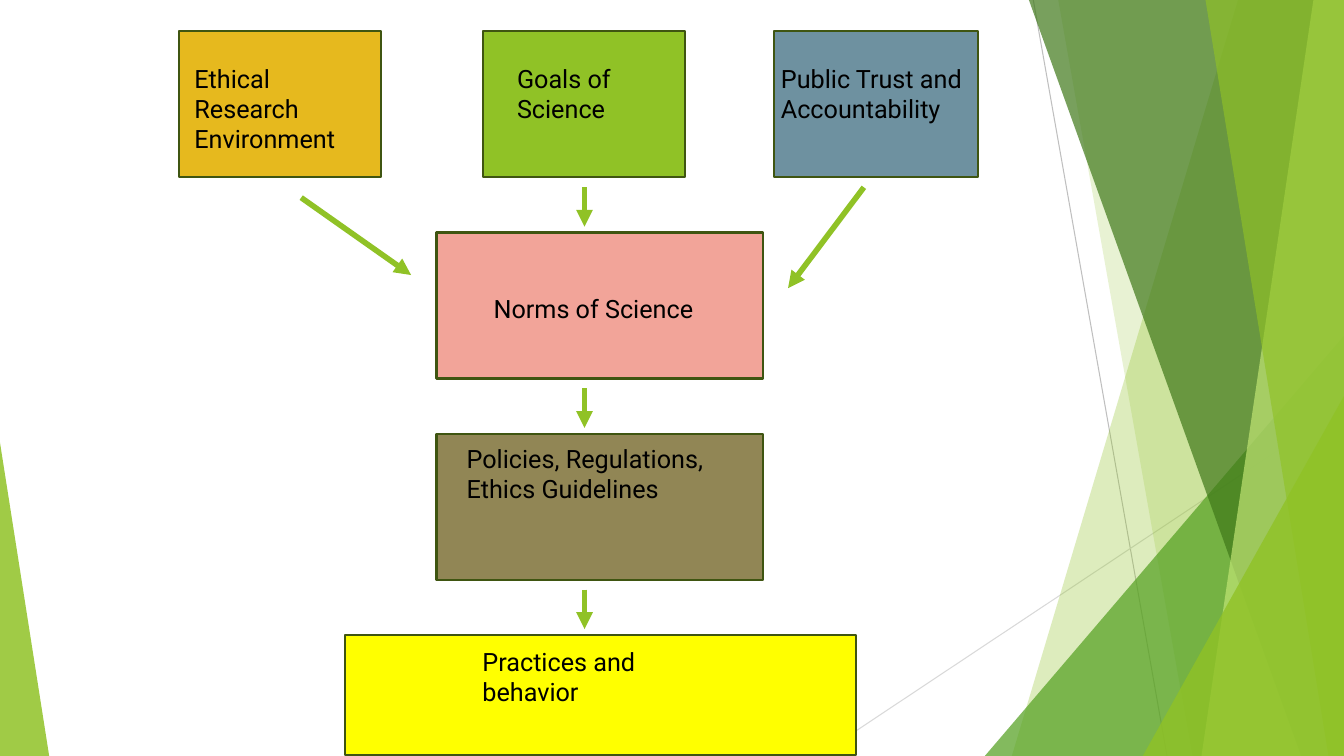
from lxml import etree
from pptx import Presentation
from pptx.dml.color import RGBColor
from pptx.enum.shapes import MSO_CONNECTOR, MSO_SHAPE
from pptx.enum.text import MSO_AUTO_SIZE
from pptx.oxml.ns import qn
from pptx.util import Cm, Pt

STRAIGHT = MSO_CONNECTOR.STRAIGHT
RECTANGLE = MSO_SHAPE.RECTANGLE
TRIANGLE = MSO_SHAPE.ISOSCELES_TRIANGLE
FIT_SHAPE = MSO_AUTO_SIZE.SHAPE_TO_FIT_TEXT

WIDTH, HEIGHT = 33.87, 19.05
TOP, ROW_PITCH, BOX_HEIGHT = 0.79, 5.07, 3.68
GREEN, OUTLINE, BLACK = "90C226", "3F5511", "000000"
FONT = {"name": "Roboto", "size": Pt(18)}

# row, left, width, height, fill, text, text left, text drop, text width, lines
BOXES = [
    (1, 11, 8.23, BOX_HEIGHT, "F2A499", "Norms of Science", 12.19, 1.4, 6.45, 1),
    (2, 11, 8.23, BOX_HEIGHT, "918655", "Policies, Regulations, Ethics Guidelines", 11.51, 0.12, 7.29, 2),
    (0, 4.52, 5.08, BOX_HEIGHT, "E6B91E", "Ethical Research Environment", 4.65, 0.68, 4.75, 3),
    (0, 12.18, 5.08, BOX_HEIGHT, GREEN, "Goals of Science", 12.78, 0.68, 4.75, 2),
    (0, 19.51, 5.13, BOX_HEIGHT, "6E91A0", "Public Trust and Accountability", 19.43, 0.68, 5.13, 2),
    (3, 8.69, 12.88, 3.02, "FFFF00", "Practices and behavior", 11.91, 0.15, 6.45, 2),
]
SIDE_ARROWS = [(7.59, 4.98, 10.36, 6.93), (21.77, 4.72, 19.86, 7.26)]
DOWN_ARROW_X, DOWN_ARROW_TOP, DOWN_ARROW_LENGTH = 14.73, 4.72, 0.99

HAIRLINES = [
    (26.04, 0, 29.41, HEIGHT, "BFBFBF"),
    (WIDTH, 10.24, 20.62, HEIGHT, "D9D9D9"),
]
BANDS_BEHIND = [(31.2, 25.5, GREEN, 30), (26.67, 30.05, GREEN, 20)]
BANDS_FRONT = [
    (25.93, 32.79, "3F7819", 70),
    (33.1, 30.28, "C0E474", 70),
    (30.38, 33.48, GREEN, 65),
]
BACK_TRIANGLE = (24.82, 8.46, 9.05, 1, "54A021", 72)
FRONT_TRIANGLES = [(28.8, 9.98, 5.07, 1, GREEN, 80), (0, 11.15, 1.24, 0, GREEN, 85)]


def set_values(target, values):
    for name, value in values.items():
        setattr(target, name, value)


def color(target, hex_color):
    target.rgb = RGBColor.from_string(hex_color)


def fill_shape(shape, hex_color, opacity=100):
    shape.shadow.inherit = False
    shape.fill.solid()
    color(shape.fill.fore_color, hex_color)
    if opacity < 100:
        fill_color = shape._element.spPr.find(qn("a:solidFill"))[0]
        etree.SubElement(fill_color, qn("a:alpha"), val=str(opacity * 1000))
    shape.line.fill.background()


def add_line(slide, x1, y1, x2, y2, hex_color, width, arrow=False):
    line = slide.shapes.add_connector(STRAIGHT, Cm(x1), Cm(y1), Cm(x2), Cm(y2))
    color(line.line.color, hex_color)
    line.line.width = Pt(width)
    if arrow:
        etree.SubElement(line.line._get_or_add_ln(), qn("a:tailEnd"), type="triangle")
    etree.SubElement(line._element.spPr, qn("a:effectLst"))


def add_band(slide, top_left, bottom_left, hex_color, opacity):
    builder = slide.shapes.build_freeform(Cm(top_left), 0)
    corners = [(WIDTH, 0), (WIDTH, HEIGHT), (bottom_left, HEIGHT)]
    builder.add_line_segments([(Cm(x), Cm(y)) for x, y in corners], close=True)
    fill_shape(builder.convert_to_shape(), hex_color, opacity)


def add_triangle(slide, left, top, width, apex, hex_color, opacity):
    shape = slide.shapes.add_shape(TRIANGLE, Cm(left), Cm(top), Cm(width), Cm(HEIGHT - top))
    shape.adjustments[0] = apex
    fill_shape(shape, hex_color, opacity)


def add_box(slide, row, left, width, height, hex_color, text, text_left, drop, text_width, lines):
    top = TOP + row * ROW_PITCH
    box = slide.shapes.add_shape(RECTANGLE, Cm(left), Cm(top), Cm(width), Cm(height))
    fill_shape(box, hex_color)
    color(box.line.color, OUTLINE)
    box.line.width = Pt(1.5)

    label = slide.shapes.add_textbox(
        Cm(text_left), Cm(top + drop), Cm(text_width), Cm(0.25 + lines * 0.77)
    )
    set_values(label.text_frame, {"word_wrap": True, "auto_size": FIT_SHAPE})
    run = label.text_frame.paragraphs[0].add_run()
    run.text = text
    set_values(run.font, FONT)
    color(run.font.color, BLACK)


def main():
    presentation = Presentation()
    set_values(presentation, {"slide_width": Cm(WIDTH), "slide_height": Cm(HEIGHT)})
    slide = presentation.slides.add_slide(presentation.slide_layouts[6])

    for hairline in HAIRLINES:
        add_line(slide, *hairline, 0.75)
    for band in BANDS_BEHIND:
        add_band(slide, *band)
    add_triangle(slide, *BACK_TRIANGLE)
    for band in BANDS_FRONT:
        add_band(slide, *band)
    for triangle in FRONT_TRIANGLES:
        add_triangle(slide, *triangle)

    for box in BOXES:
        add_box(slide, *box)

    down_arrows = []
    for row in range(3):
        start = DOWN_ARROW_TOP + row * ROW_PITCH
        down_arrows.append((DOWN_ARROW_X, start, DOWN_ARROW_X, start + DOWN_ARROW_LENGTH))
    for arrow in SIDE_ARROWS + down_arrows:
        add_line(slide, *arrow, GREEN, 4, arrow=True)

    presentation.save("out.pptx")


if __name__ == "__main__":
    main()
